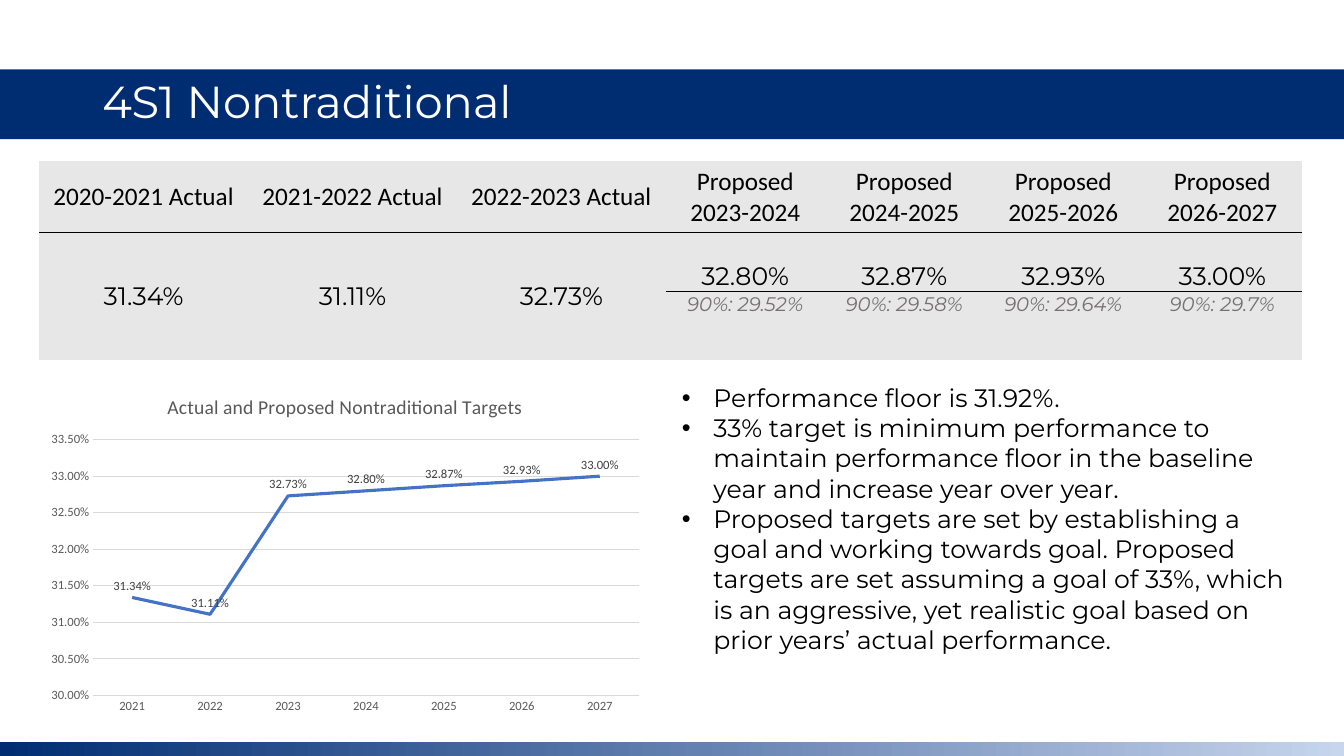
import copy

import pptx
import pptx.chart.data
import pptx.dml.color
import pptx.enum.chart
import pptx.enum.shapes
import pptx.enum.text
import pptx.oxml
import pptx.oxml.ns
import pptx.util
from pptx.util import Pt

ANCHOR = pptx.enum.text.MSO_ANCHOR
ALIGN = pptx.enum.text.PP_ALIGN
qn = pptx.oxml.ns.qn

SLIDE_W, SLIDE_H = 960, 540
NAVY, GREY, BLACK, AXIS_GREY, GRID_GREY = "002D72", "E7E7E7", "000000", "595959", "D9D9D9"
NO_TABLE_STYLE = "{2D5ABB26-0587-4C30-8999-92F81FD0307C}"

HEADINGS = [
    "2020-2021 Actual", "2021-2022 Actual", "2022-2023 Actual",
    "Proposed\v2023-2024", "Proposed\v2024-2025",
    "Proposed\v2025-2026", "Proposed\v2026-2027",
]
RATES = [0.3134, 0.3111, 0.3273, 0.3280, 0.3287, 0.3293, 0.3300]
NINETY_PERCENT = ["90%: 29.52%", "90%: 29.58%", "90%: 29.64%", "90%: 29.7%"]
ACTUAL_COUNT = len(RATES) - len(NINETY_PERCENT)
CHART_TITLE = "Actual and Proposed Nontraditional Targets"
NOTES = [
    "Performance floor is 31.92%.",
    "33% target is minimum performance to maintain performance floor in the "
    "baseline year and increase year over year.",
    "Proposed targets are set by establishing a goal and working towards goal. "
    "Proposed targets are set assuming a goal of 33%, which is an aggressive, "
    "yet realistic goal based on prior years’ actual performance.",
]


def rgb(hex_code):
    return pptx.dml.color.RGBColor.from_string(hex_code)


def set_all(target, values):
    for name, value in values.items():
        setattr(target, name, value)


def set_font(font, size, color, name="Montserrat", italic=False):
    set_all(font, {"size": Pt(size), "name": name, "italic": italic, "bold": False})
    font.color.rgb = rgb(color)


def add_band(slide, box):
    band = slide.shapes.add_shape(pptx.enum.shapes.MSO_SHAPE.RECTANGLE, *map(Pt, box))
    band.shadow.inherit = False
    band.line.fill.background()
    return band


def add_title(slide, box):
    left, top, width, height = box
    band = add_band(slide, box)
    band.fill.solid()
    band.fill.fore_color.rgb = rgb(NAVY)
    title = slide.shapes.add_textbox(Pt(left + 66), Pt(top), Pt(width - 132), Pt(height))
    frame = title.text_frame
    set_all(frame, {"word_wrap": True, "vertical_anchor": ANCHOR.MIDDLE})
    heading = frame.paragraphs[0]
    set_all(heading, {"text": "4S1 Nontraditional", "line_spacing": 0.9})
    set_font(heading.font, 32, "FFFFFF")


def add_footer(slide, box):
    fill = add_band(slide, box).fill
    fill.gradient()
    fill.gradient_angle = 0
    # The default gradient has two stops; a third is added
    stop_list = fill._fill._gradFill.find(qn("a:gsLst"))
    stop_list.append(copy.deepcopy(stop_list[0]))
    stops = [(0, NAVY), (0.52, "6481B0"), (1, "C7D5ED")]
    for stop, (position, color) in zip(fill.gradient_stops, stops):
        stop.position = position
        stop.color.rgb = rgb(color)


def add_border(cell, side):
    border = pptx.oxml.parse_xml(
        f'<a:{side} {pptx.oxml.ns.nsdecls("a")} w="12700"><a:solidFill>'
        f'<a:srgbClr val="{BLACK}"/></a:solidFill></a:{side}>')
    cell._tc.get_or_add_tcPr().insert(0, border)


def fill_cell(cell, text, size=18, font="Montserrat", color=BLACK, italic=False,
              anchor=ANCHOR.MIDDLE):
    cell.vertical_anchor = anchor
    cell.text = text
    line = cell.text_frame.paragraphs[0]
    line.alignment = ALIGN.CENTER
    for run in line.runs:
        set_font(run.font, size, color, font, italic)


def add_target_table(slide, box):
    frame = slide.shapes.add_table(3, len(HEADINGS), *map(Pt, box))
    table = frame.table
    set_all(table, {"first_row": False, "horz_banding": False})
    table._tbl.tblPr.find(qn("a:tableStyleId")).text = NO_TABLE_STYLE
    for index, column in enumerate(table.columns):
        column.width = Pt(149.2 if index < ACTUAL_COUNT else 113.6)
    for row, height in zip(table.rows, (51, 42.5, 49)):
        row.height = Pt(height)
    insets = {"margin_left": Pt(0.7), "margin_right": Pt(0.7),
              "margin_top": Pt(0.7), "margin_bottom": 0}
    for cell in table.iter_cells():
        set_all(cell, insets)
        cell.fill.solid()
        cell.fill.fore_color.rgb = rgb(GREY)

    for index, (heading, rate) in enumerate(zip(HEADINGS, RATES)):
        top, middle, bottom = (table.cell(row, index) for row in range(3))
        fill_cell(top, heading, font="Calibri")
        add_border(top, "lnB")
        add_border(middle, "lnT")
        if index < ACTUAL_COUNT:
            middle.merge(bottom)
            fill_cell(middle, f"{rate:.2%}")
        else:
            fill_cell(middle, f"{rate:.2%}", anchor=ANCHOR.BOTTOM)
            fill_cell(bottom, NINETY_PERCENT[index - ACTUAL_COUNT], size=14,
                      color="757171", italic=True, anchor=ANCHOR.TOP)


def add_target_chart(slide, box):
    enums = pptx.enum.chart
    data = pptx.chart.data.CategoryChartData(number_format="0.00%")
    data.categories = [str(year) for year in range(2021, 2028)]
    data.add_series(CHART_TITLE, RATES)
    chart = slide.shapes.add_chart(enums.XL_CHART_TYPE.LINE, *map(Pt, box), data).chart
    set_font(chart.font, 10, BLACK, "Calibri")
    set_all(chart, {"has_legend": False, "has_title": True})
    chart.chart_title.include_in_layout = False
    title = chart.chart_title.text_frame.paragraphs[0]
    title.text = CHART_TITLE
    set_font(title.runs[0].font, 14, AXIS_GREY, "Calibri")

    # Axes
    years, rates = chart.category_axis, chart.value_axis
    for axis in (years, rates):
        set_all(axis, {"major_tick_mark": enums.XL_TICK_MARK.NONE,
                       "minor_tick_mark": enums.XL_TICK_MARK.NONE})
        set_font(axis.tick_labels.font, 9, AXIS_GREY, "Calibri")
    set_all(rates, {"minimum_scale": 0.3, "maximum_scale": 0.335, "major_unit": 0.005,
                    "has_major_gridlines": True})
    set_all(rates.tick_labels, {"number_format": "0.00%", "number_format_is_linked": False})
    rates.format.line.fill.background()
    for line in (years.format.line, rates.major_gridlines.format.line):
        line.color.rgb = rgb(GRID_GREY)
        line.width = Pt(0.75)

    # Line and its labels
    plot = chart.plots[0]
    plot.vary_by_categories = False
    targets = plot.series[0]
    targets.smooth = False
    targets.marker.style = enums.XL_MARKER_STYLE.NONE
    targets.format.line.color.rgb = rgb("4472C4")
    targets.format.line.width = Pt(2.25)
    labels = targets.data_labels
    set_all(labels, {"show_value": True, "position": enums.XL_LABEL_POSITION.ABOVE,
                     "number_format": "0.00%", "number_format_is_linked": False})
    set_font(labels.font, 9, "404040", "Calibri")


def add_notes(slide, box):
    frame = slide.shapes.add_textbox(*map(Pt, box)).text_frame
    frame.word_wrap = True
    for index, note in enumerate(NOTES):
        point = frame.add_paragraph() if index else frame.paragraphs[0]
        point.text = note
        properties = point._p.get_or_add_pPr()
        properties.set("marL", str(Pt(22.5)))
        properties.set("indent", str(-Pt(22.5)))
        for tag, key, value in (("buFont", "typeface", "Arial"), ("buChar", "char", "•")):
            properties.append(pptx.oxml.parse_xml(
                f'<a:{tag} {pptx.oxml.ns.nsdecls("a")} {key}="{value}"/>'))
        set_font(point.font, 18, BLACK)


def main():
    deck = pptx.Presentation()
    set_all(deck, {"slide_width": Pt(SLIDE_W), "slide_height": Pt(SLIDE_H)})
    slide = deck.slides.add_slide(deck.slide_layouts[6])
    add_title(slide, (0, 49.5, SLIDE_W, 50))
    add_footer(slide, (0, SLIDE_H - 10, SLIDE_W, 10))
    add_target_table(slide, (28, 115, 902, 142.5))
    add_notes(slide, (480, 269.5, 445, 204))
    add_target_chart(slide, (28, 269.5, 437, 245.5))
    deck.save("out.pptx")


if __name__ == "__main__":
    main()
